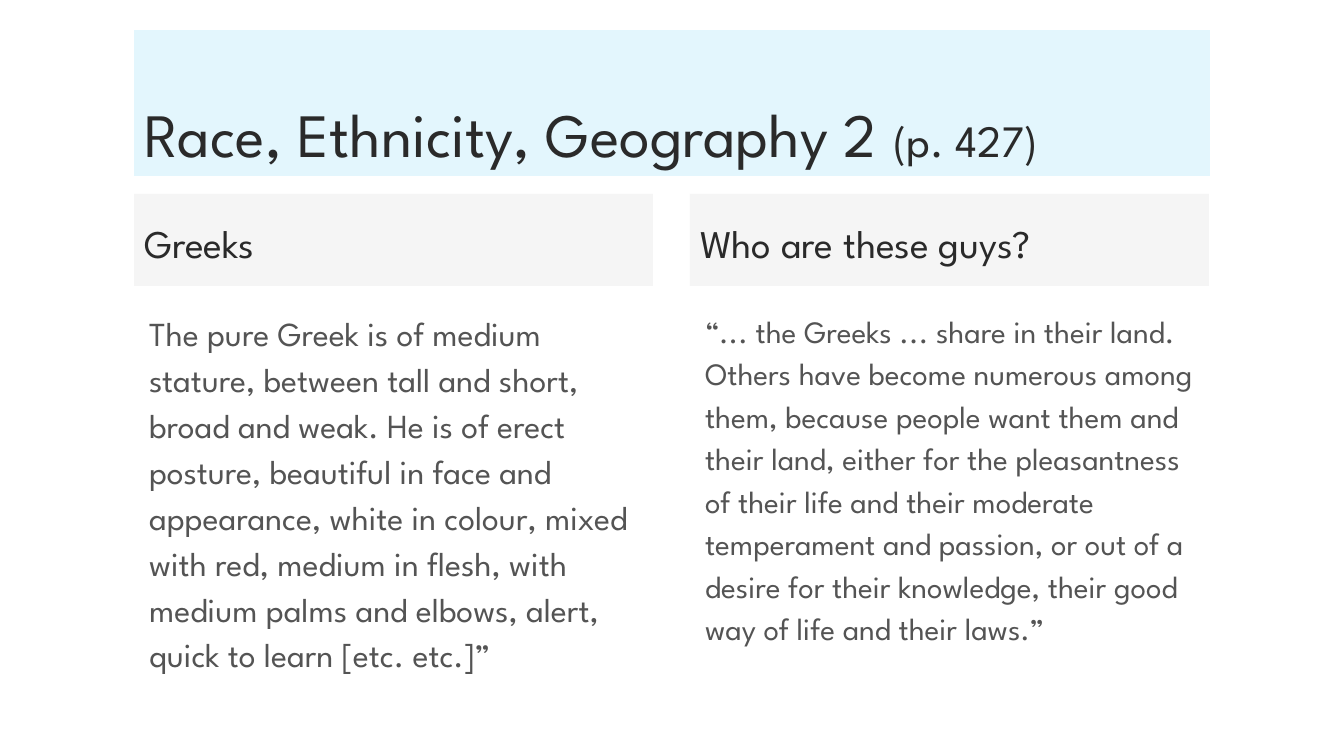
from lxml import etree
from pptx import Presentation
from pptx import util as u
from pptx.dml.color import RGBColor
from pptx.enum import text
from pptx.oxml.ns import qn

PX = 914400 / 100.8
FONT = "League Spartan"
DARK, GREY = "2A2A2A", "545454"
SKY, SILVER = "00B0F0", "BFBFBF"


def px(n):
    return u.Emu(round(n * PX))


def rgb(value):
    return RGBColor.from_string(value)


def place(sp, box):
    for name, value in zip(("left", "top", "width", "height"), box):
        setattr(sp, name, px(value))


def tint(sp, color, percent):
    sp.fill.solid()
    sp.fill.fore_color.rgb = rgb(color)
    clr = sp.fill._xPr.find(qn("a:solidFill"))[0]
    etree.SubElement(clr, qn("a:alpha"), val=str(percent * 1000))


def write(sp, runs, color, anchor, spacing, before=0, indent=0):
    tf = sp.text_frame
    frame = {"word_wrap": True, "auto_size": text.MSO_AUTO_SIZE.NONE,
             "vertical_anchor": anchor}
    for name, value in frame.items():
        setattr(tf, name, value)
    p = tf.paragraphs[0]
    para = {"alignment": text.PP_ALIGN.LEFT, "line_spacing": spacing,
            "space_before": u.Pt(before), "space_after": u.Pt(0)}
    for name, value in para.items():
        setattr(p, name, value)
    pPr = p._p.get_or_add_pPr()
    pPr.set("marL", str(px(indent)))
    pPr.set("indent", "0")
    etree.SubElement(pPr, qn("a:buNone"))
    for words, size in runs:
        r = p.add_run()
        r.text = words
        font = {"name": FONT, "size": u.Pt(size), "bold": False}
        for name, value in font.items():
            setattr(r.font, name, value)
        r.font.color.rgb = rgb(color)


def add_title(sp, box, runs):
    place(sp, box)
    tint(sp, SKY, 11)
    write(sp, runs, DARK, text.MSO_ANCHOR.BOTTOM, 0.9)


def add_column(head, body, box, heading, quote, size):
    x, y, w, h = box
    head_h, body_dy = 92, 108
    place(head, (x, y, w, head_h))
    tint(head, SILVER, 15)
    write(head, [(heading, 28)], DARK, text.MSO_ANCHOR.MIDDLE, 1.14)
    place(body, (x, y + body_dy, w, h - body_dy))
    write(body, [(quote, size)], GREY, text.MSO_ANCHOR.TOP, 1.14, 18, 5)


COLUMNS = [
    ("Greeks",
     "The pure Greek is of medium stature, between tall and short, broad and "
     "weak. He is of erect posture, beautiful in face and appearance, white in "
     "colour, mixed with red, medium in flesh, with medium palms and elbows, "
     "alert, quick to learn [etc. etc.]”", 24),
    ("Who are these guys?",
     "“... the Greeks ... share in their land. Others have become numerous "
     "among them, because people want them and their land, either for the "
     "pleasantness of their life and their moderate temperament and passion, "
     "or out of a desire for their knowledge, their good way of life and "
     "their laws.”", 22.2),
]


def add_comparison(prs, box):
    x, y, w, h = box
    gap, title_h, columns_dy = 37, 146, 164
    col_w = (w - gap) // 2
    s = prs.slides.add_slide(prs.slide_layouts.get_by_name("Comparison"))
    ph = {sp.placeholder_format.idx: sp for sp in s.placeholders}
    add_title(ph[0], (x, y, w, title_h),
              [("Race, Ethnicity, Geography 2 ", 44), ("(p. 427)", 32)])
    for i, (heading, quote, size) in enumerate(COLUMNS):
        col = (x + i * (col_w + gap), y + columns_dy, col_w, h - columns_dy)
        add_column(ph[2 * i + 1], ph[2 * i + 2], col, heading, quote, size)


def main():
    prs = Presentation()
    prs.slide_width, prs.slide_height = px(1344), px(756)
    add_comparison(prs, (134, 30, 1076, 726))
    prs.save("out.pptx")


if __name__ == "__main__":
    main()
